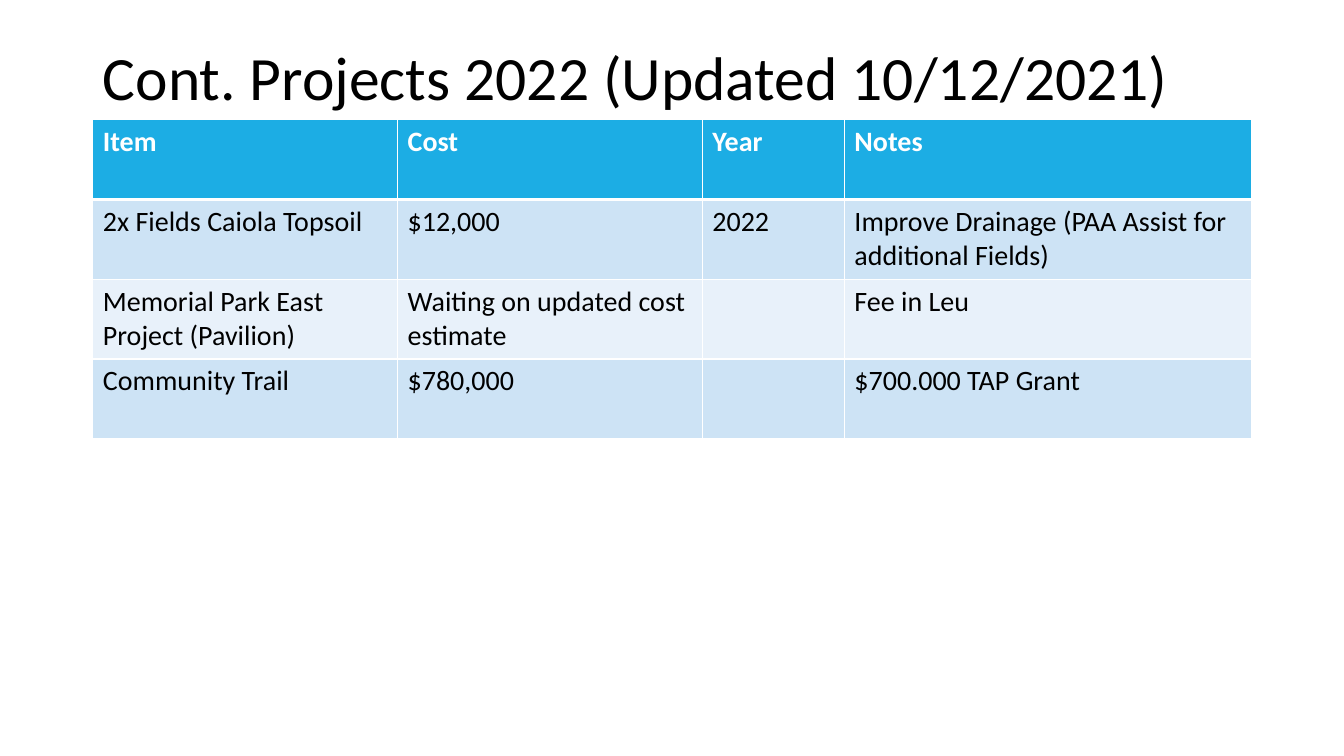
"""Build the slide listing the continued 2022 projects."""
from dataclasses import dataclass

from lxml import etree
from pptx import Presentation
from pptx.dml.color import RGBColor
from pptx.enum.text import MSO_ANCHOR
from pptx.oxml.ns import qn
from pptx.util import Cm, Pt

MIDDLE = MSO_ANCHOR.MIDDLE
COLORS = {
    "header": "1CADE4",
    "odd": "CDE3F5",
    "even": "E8F1FA",
    "white": "FFFFFF",
    "black": "000000",
}
TITLE_FORMAT = {"name": "Calibri", "size": Pt(44), "bold": False}
HEADER_FORMAT = {"name": "Calibri", "size": Pt(20), "bold": True}
BODY_FORMAT = HEADER_FORMAT | {"bold": False}
LEFT, WIDTH = 2.34, 29.21
TITLE_TOP, TABLE_TOP, ROW_HEIGHT = 1.02, 3.02, 2.01
COLUMN_WIDTHS = (7.68, 7.68, 3.58, 10.27)
THIN, THICK = 1, 3


@dataclass(frozen=True)
class Project:
    item: str
    cost: str
    year: str
    notes: str

    def texts(self) -> tuple[str, ...]:
        return self.item, self.cost, self.year, self.notes


HEADINGS = Project("Item", "Cost", "Year", "Notes")
PROJECTS = (
    Project("2x Fields Caiola Topsoil", "$12,000", "2022",
            "Improve Drainage (PAA Assist for additional Fields)"),
    Project("Memorial Park East Project (Pavilion)",
            "Waiting on updated cost estimate", "", "Fee in Leu"),
    Project("Community Trail", "$780,000", "", "$700.000 TAP Grant"),
)


def write(para, text: str, formats: dict, color: str) -> None:
    font = para.font
    if text:
        span = para.add_run()
        span.text = text
        font = span.font
    for key, value in formats.items():
        setattr(font, key, value)
    font.color.rgb = RGBColor.from_string(COLORS[color])


def set_borders(cell, top: int, bottom: int) -> None:
    properties = cell._tc.get_or_add_tcPr()
    sides = {"lnL": THIN, "lnR": THIN, "lnT": top, "lnB": bottom}
    for position, (side, width) in enumerate(sides.items()):
        line = etree.Element(qn(f"a:{side}"), w=str(Pt(width)))
        fill = etree.SubElement(line, qn("a:solidFill"))
        etree.SubElement(fill, qn("a:srgbClr"), val=COLORS["white"])
        properties.insert(position, line)


def add_title(page, text: str) -> None:
    box = page.shapes.add_textbox(
        Cm(LEFT), Cm(TITLE_TOP), Cm(WIDTH), Cm(TABLE_TOP - TITLE_TOP))
    frame = box.text_frame
    frame.word_wrap = True
    frame.vertical_anchor = MIDDLE
    para = frame.paragraphs[0]
    para.line_spacing = 0.9
    write(para, text, TITLE_FORMAT, "black")


def add_projects(page) -> None:
    rows = (HEADINGS, *PROJECTS)
    table = page.shapes.add_table(
        len(rows), len(COLUMN_WIDTHS), Cm(LEFT), Cm(TABLE_TOP),
        Cm(WIDTH), Cm(ROW_HEIGHT * len(rows))).table
    for column, width in zip(table.columns, COLUMN_WIDTHS):
        column.width = Cm(width)
    for index, project in enumerate(rows):
        header = index == 0
        fill = "header" if header else "odd" if index % 2 else "even"
        for cell, text in zip(table.rows[index].cells, project.texts()):
            cell.fill.solid()
            cell.fill.fore_color.rgb = RGBColor.from_string(COLORS[fill])
            set_borders(cell, THICK if index == 1 else THIN,
                        THICK if header else THIN)
            write(cell.text_frame.paragraphs[0], text,
                  HEADER_FORMAT if header else BODY_FORMAT,
                  "white" if header else "black")


def main() -> None:
    deck = Presentation()
    deck.slide_width, deck.slide_height = Cm(33.87), Cm(19.05)
    page = deck.slides.add_slide(deck.slide_layouts[6])
    add_projects(page)
    add_title(page, "Cont. Projects 2022 (Updated 10/12/2021)")
    deck.save("out.pptx")


if __name__ == "__main__":
    main()
